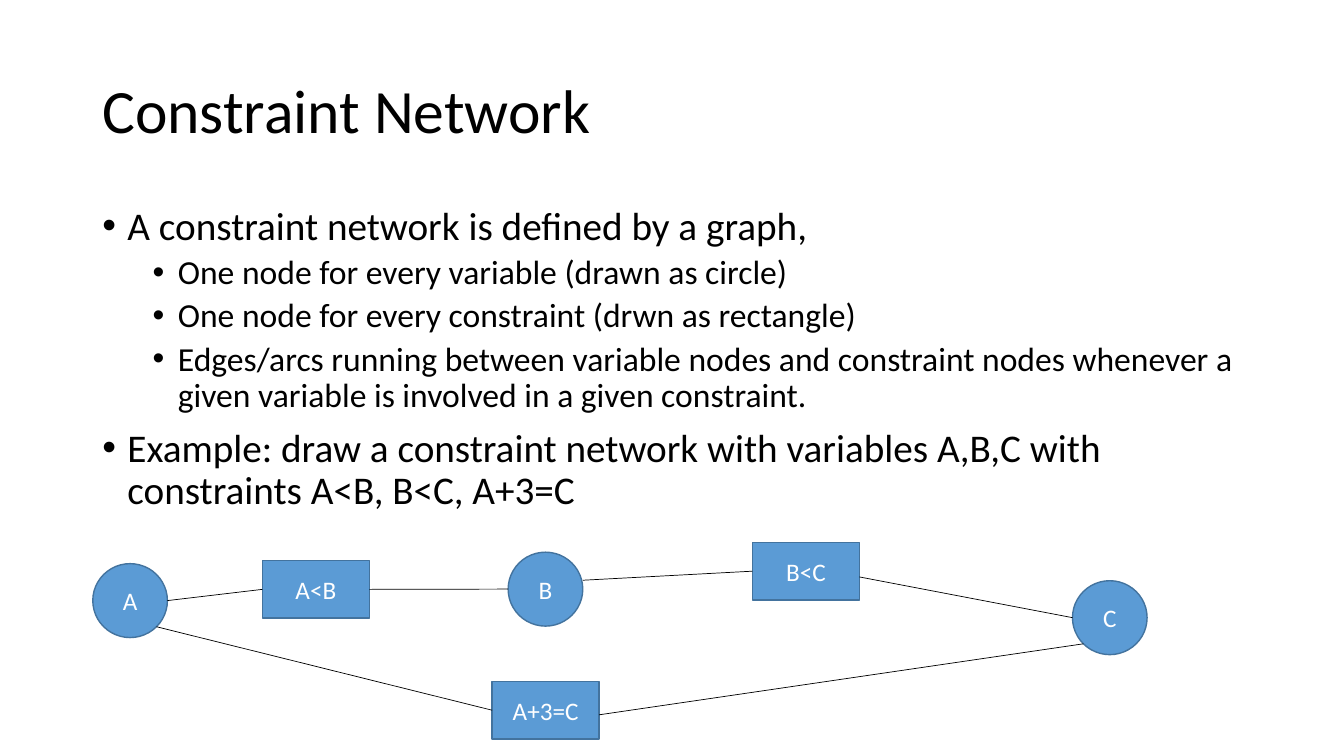
from lxml import etree
from pptx import Presentation
from pptx.dml.color import RGBColor
from pptx.enum.shapes import MSO_CONNECTOR, MSO_SHAPE
from pptx.enum.text import MSO_ANCHOR, PP_ALIGN
from pptx.oxml.ns import qn
from pptx.util import Pt

OVAL, RECTANGLE = MSO_SHAPE.OVAL, MSO_SHAPE.RECTANGLE
STRAIGHT = MSO_CONNECTOR.STRAIGHT
MIDDLE, CENTER = MSO_ANCHOR.MIDDLE, PP_ALIGN.CENTER

FONT = "Calibri"
COLORS = {"text": "000000", "node": "5B9BD5", "outline": "43739E", "label": "FFFFFF"}

POINTS = [
    (0, "A constraint network is defined by a graph,"),
    (1, "One node for every variable (drawn as circle)"),
    (1, "One node for every constraint (drwn as rectangle)"),
    (1, "Edges/arcs running between variable nodes and constraint nodes "
        "whenever a given variable is involved in a given constraint."),
    (0, "Example: draw a constraint network with variables A,B,C "
        "with constraints A<B, B<C, A+3=C"),
]
LEVELS = {0: {"size": 28, "before": 10, "margin": 18},
          1: {"size": 24, "before": 5, "margin": 54}}
HANGING = 18

VARIABLE_SIZE = (53.3, 52.8)
CONSTRAINT_SIZE = (76.5, 41.2)
VARIABLES = {"A": (0, 15.2), "B": (296.7, 7), "C": (699.8, 27.4)}
CONSTRAINTS = {"A<B": (121.1, 13), "A+3=C": (285.2, 99.3), "B<C": (471.1, 0)}

LEFT, RIGHT = (0, 0.5), (1, 0.5)
LOWER_LEFT, LOWER_RIGHT = (0.146, 0.854), (0.854, 0.854)
EDGES = [
    ("A", RIGHT, "A<B", LEFT),
    ("A<B", RIGHT, "B", LEFT),
    ("B", (1, 0.38), "B<C", LEFT),
    ("B<C", (1, 0.6), "C", LEFT),
    ("C", LOWER_LEFT, "A+3=C", (1, 0.58)),
    ("A+3=C", LEFT, "A", LOWER_RIGHT),
]


def color(name):
    """Return the named colour."""
    return RGBColor.from_string(COLORS[name])


def style_text(paragraph, size, color_name):
    """Set the font of every run in a paragraph."""
    for run in paragraph.runs:
        run.font.name = FONT
        run.font.size = Pt(size)
        run.font.color.rgb = color(color_name)


def add_text_frame(slide, box):
    """Add a wrapping text box and return its frame."""
    frame = slide.shapes.add_textbox(*map(Pt, box)).text_frame
    frame.word_wrap = True
    return frame


def add_title(slide, box):
    """Place the slide title in the box."""
    frame = add_text_frame(slide, box)
    frame.vertical_anchor = MIDDLE
    frame.text = "Constraint Network"
    title = frame.paragraphs[0]
    title.line_spacing = 0.9
    style_text(title, 44, "text")


def add_points(slide, box):
    """Place the two-level bulleted definition in the box."""
    frame = add_text_frame(slide, box)
    frame.text = "\n".join(text for _, text in POINTS)
    for point, (level, _) in zip(frame.paragraphs, POINTS):
        look = LEVELS[level]
        point.level = level
        point.line_spacing = 0.9
        point.space_before = Pt(look["before"])
        style_text(point, look["size"], "text")
        properties = point._p.get_or_add_pPr()
        properties.set("marL", str(Pt(look["margin"])))
        properties.set("indent", str(-Pt(HANGING)))
        etree.SubElement(properties, qn("a:buFont")).set("typeface", "Arial")
        etree.SubElement(properties, qn("a:buChar")).set("char", "•")


def add_node(slide, geometry, label, box):
    """Draw one labelled network node."""
    node = slide.shapes.add_shape(geometry, *map(Pt, box))
    node.shadow.inherit = False
    node.fill.solid()
    node.fill.fore_color.rgb = color("node")
    node.line.color.rgb = color("outline")
    node.line.width = Pt(1)
    frame = node.text_frame
    frame.word_wrap = True
    frame.vertical_anchor = MIDDLE
    frame.text = label
    frame.paragraphs[0].alignment = CENTER
    style_text(frame.paragraphs[0], 18, "label")


def add_edge(slide, start, end):
    """Draw one thin edge between two points."""
    edge = slide.shapes.add_connector(STRAIGHT, *map(Pt, start + end))
    edge.line.color.rgb = color("text")
    edge.line.width = Pt(0.5)
    etree.SubElement(edge._element.spPr, qn("a:effectLst"))


def anchor(box, fraction):
    """Return the point at a fraction of a box's width and height."""
    left, top, width, height = box
    return left + width * fraction[0], top + height * fraction[1]


def add_network(slide, box):
    """Draw the variable and constraint nodes and their edges in the box."""
    left, top = box[:2]
    node_boxes = {}
    for geometry, size, places in ((OVAL, VARIABLE_SIZE, VARIABLES),
                                   (RECTANGLE, CONSTRAINT_SIZE, CONSTRAINTS)):
        for label, (x, y) in places.items():
            node_boxes[label] = (left + x, top + y, *size)
            add_node(slide, geometry, label, node_boxes[label])
    for source, source_side, target, target_side in EDGES:
        add_edge(slide, anchor(node_boxes[source], source_side),
                 anchor(node_boxes[target], target_side))


def main():
    """Build and save the slide."""
    presentation = Presentation()
    presentation.slide_width, presentation.slide_height = Pt(960), Pt(540)
    slide = presentation.slides.add_slide(presentation.slide_layouts[6])
    add_title(slide, (66, 28.75, 828, 104.4))
    add_points(slide, (66, 143.75, 828, 342.6))
    add_network(slide, (66.3, 387.4, 753.1, 140.5))
    presentation.save("out.pptx")


if __name__ == "__main__":
    main()
